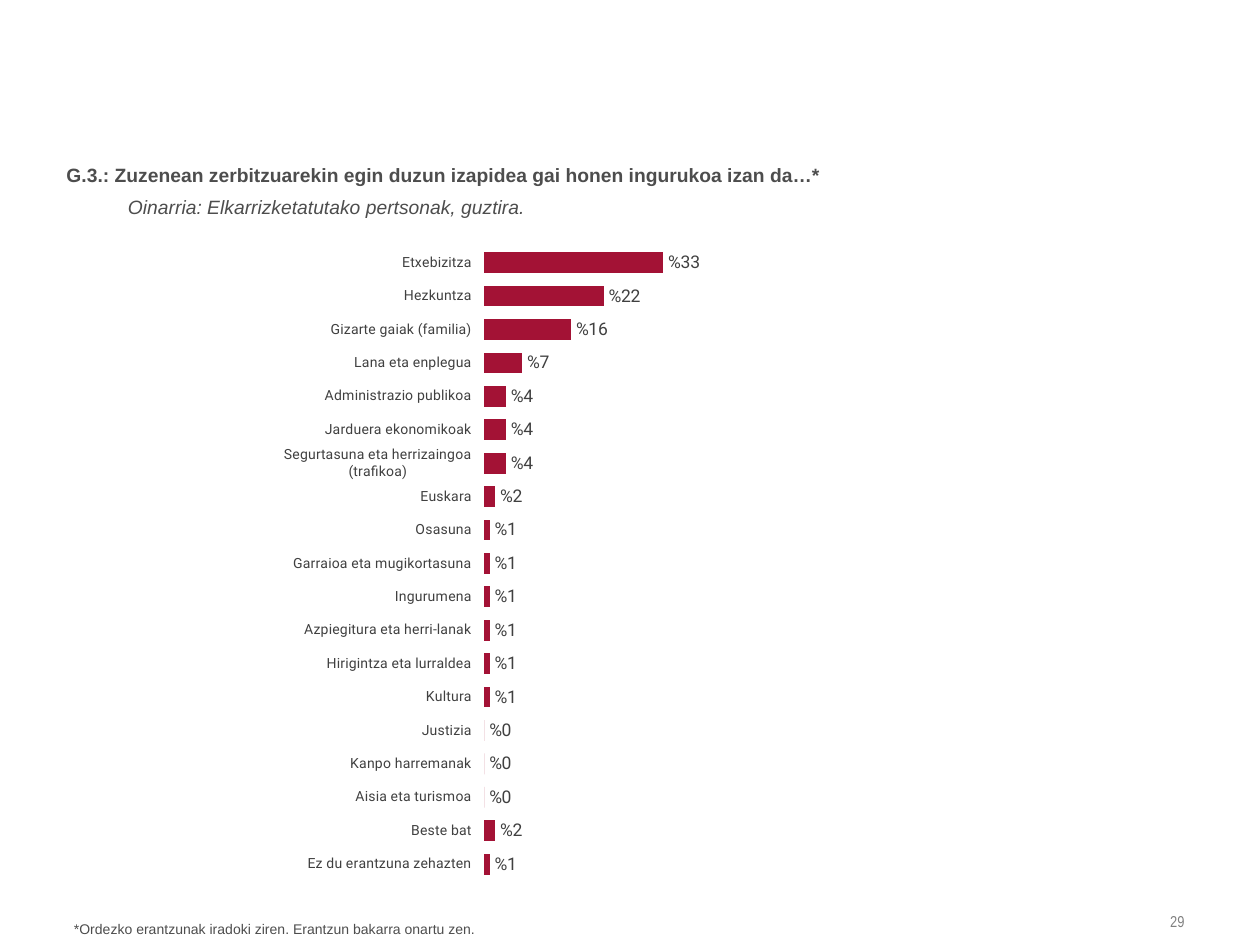
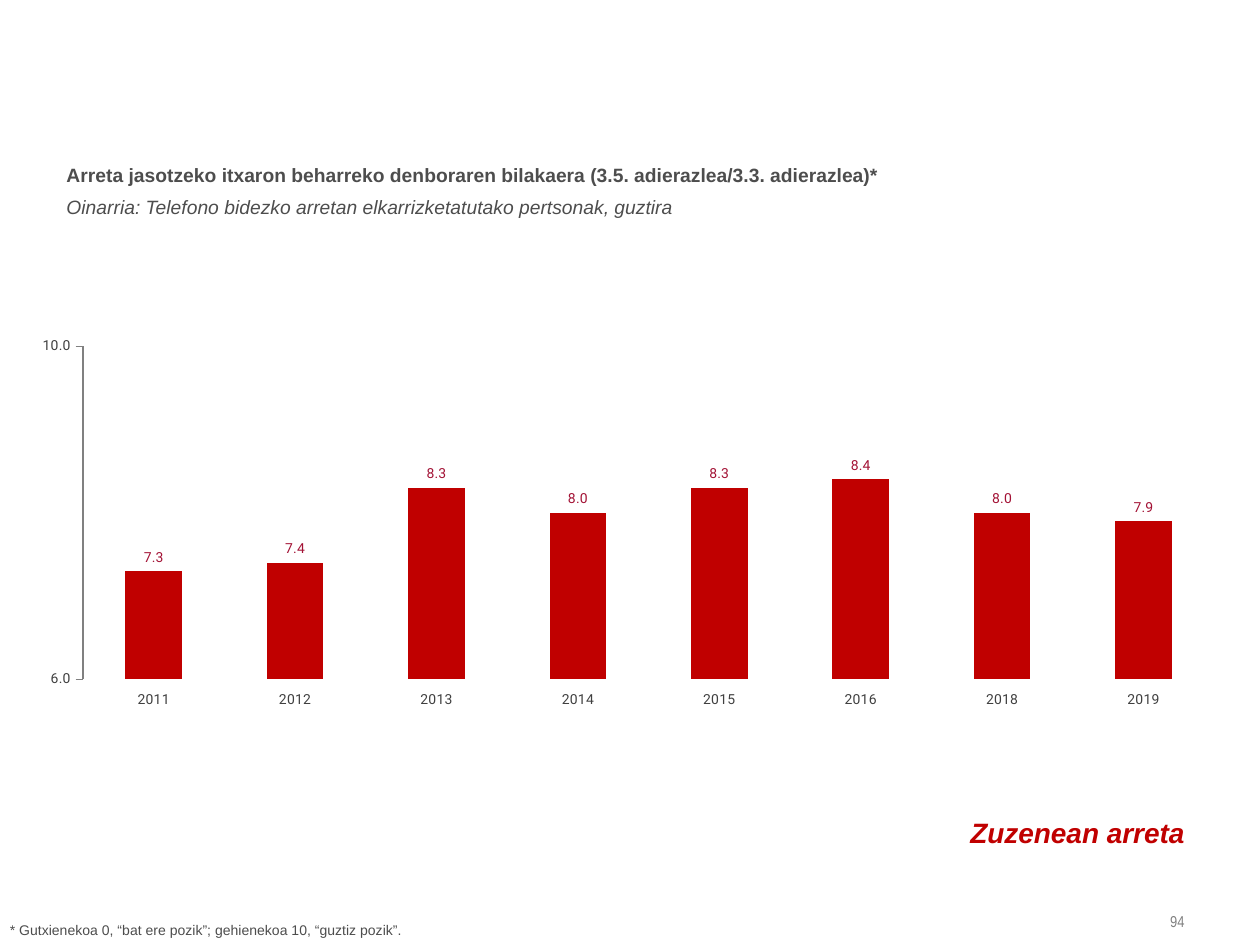
from dataclasses import dataclass

from lxml import etree
from pptx import Presentation
from pptx import util as u
from pptx.chart import data as chart_data
from pptx.dml.color import RGBColor
from pptx.enum import chart as ch
from pptx.enum import text as tx
from pptx.oxml import ns


# Shared look
@dataclass(frozen=True)
class Theme:
    body_font: str = "Arial"
    number_font: str = "Arial Narrow"
    chart_font: str = "Roboto"
    ink: str = "4D4D4D"
    chart_ink: str = "404040"
    muted: str = "808080"
    crimson: str = "A31235"
    red: str = "C00000"
    title_size: int = 11
    tag_size: int = 16
    chart_size: int = 10
    small_size: int = 8
    number_size: int = 9


THEME = Theme()


@dataclass(frozen=True)
class Box:
    """Left, top, width and height in centimetres."""
    left: float
    top: float
    width: float
    height: float

    def place(self, part) -> None:
        part.left, part.top, part.width, part.height = self.lengths()

    def lengths(self) -> tuple:
        return tuple(u.Cm(v) for v in (self.left, self.top, self.width, self.height))


@dataclass(frozen=True)
class Style:
    size: int
    color: str = THEME.ink
    font: str = THEME.body_font
    bold: bool = False
    italic: bool = False
    align: tx.PP_ALIGN = tx.PP_ALIGN.LEFT
    anchor: tx.MSO_ANCHOR = tx.MSO_ANCHOR.TOP
    line_points: int = 0
    margin: float = 0
    hanging: float = 0


@dataclass(frozen=True)
class ChartPlan:
    kind: ch.XL_CHART_TYPE
    box: Box
    plot: tuple[float, float, float, float]  # x, y, w, h as shares of the chart
    values: dict[str, float]
    color: str
    gap: int
    scale: tuple[float, float, float]  # minimum, maximum, major unit
    label_format: str
    label_size: int
    label_color: str
    top_down: bool = False
    value_axis: bool = False


@dataclass(frozen=True)
class SlidePlan:
    question: str
    base: str
    number: str
    footnote: str
    footnote_box: Box
    footnote_line: int
    chart: ChartPlan
    hanging: float = 0
    tag: str = ""


TITLE_BOX = Box(1.24, 3, 22.89, 1.55)
NUMBER_BOX = Box(22.1, 18.21, 2.03, 0.71)
TAG_BOX = Box(11.96, 16.36, 12.17, 0.89)
NUMBER_STYLE = Style(THEME.number_size, THEME.muted, THEME.number_font,
                     align=tx.PP_ALIGN.RIGHT, anchor=tx.MSO_ANCHOR.MIDDLE)
TAG_STYLE = Style(THEME.tag_size, THEME.red, bold=True, italic=True,
                  align=tx.PP_ALIGN.RIGHT, line_points=18)

# Content
TOPICS = ChartPlan(
    kind=ch.XL_CHART_TYPE.BAR_CLUSTERED,
    box=Box(5.51, 4.83, 15.19, 12.93),
    plot=(0.28, 0.01, 0.72, 0.99),
    values={
        "Etxebizitza": 0.33,
        "Hezkuntza": 0.22,
        "Gizarte gaiak (familia)": 0.16,
        "Lana eta enplegua": 0.07,
        "Administrazio publikoa": 0.04,
        "Jarduera ekonomikoak": 0.04,
        "Segurtasuna eta herrizaingoa (trafikoa)": 0.04,
        "Euskara": 0.02,
        "Osasuna": 0.01,
        "Garraioa eta mugikortasuna": 0.01,
        "Ingurumena": 0.01,
        "Azpiegitura eta herri-lanak": 0.01,
        "Hirigintza eta lurraldea": 0.01,
        "Kultura": 0.01,
        "Justizia": 0,
        "Kanpo harremanak": 0,
        "Aisia eta turismoa": 0,
        "Beste bat": 0.02,
        "Ez du erantzuna zehazten": 0.01,
    },
    color=THEME.crimson, gap=61, scale=(0, 1, 0.5), label_format="%0",
    label_size=THEME.chart_size, label_color=THEME.chart_ink, top_down=True,
)

WAITING = ChartPlan(
    kind=ch.XL_CHART_TYPE.COLUMN_CLUSTERED,
    box=Box(0.86, 6.81, 23.62, 7.47),
    plot=(0.03, 0.02, 0.97, 0.91),
    values={"2011": 7.3, "2012": 7.4, "2013": 8.3, "2014": 8,
            "2015": 8.3, "2016": 8.4, "2018": 8, "2019": 7.9},
    color=THEME.red, gap=150, scale=(6, 10, 4), label_format="0.0",
    label_size=THEME.small_size, label_color=THEME.crimson, value_axis=True,
)

SLIDES = [
    SlidePlan(
        question="G.3.: Zuzenean zerbitzuarekin egin duzun izapidea gai honen "
                 "ingurukoa izan da…*",
        base="Oinarria: Elkarrizketatutako pertsonak, guztira.",
        number="29",
        footnote="*Ordezko erantzunak iradoki ziren. Erantzun bakarra onartu zen.",
        footnote_box=Box(1.24, 18.06, 22.89, 0.97), footnote_line=20,
        chart=TOPICS, hanging=1.24,
    ),
    SlidePlan(
        question="Arreta jasotzeko itxaron beharreko denboraren bilakaera "
                 "(3.5. adierazlea/3.3. adierazlea)*",
        base="Oinarria: Telefono bidezko arretan elkarrizketatutako pertsonak, guztira",
        number="94",
        footnote="* Gutxienekoa 0, “bat ere pozik”; gehienekoa 10, “guztiz pozik”.",
        footnote_box=Box(-0.05, 18.44, 22.89, 0.61), footnote_line=0,
        chart=WAITING, tag="Zuzenean arreta",
    ),
]


def set_font(font, size: int, color: str, name: str) -> None:
    font.size, font.name = u.Pt(size), name
    font.color.rgb = RGBColor.from_string(color)


def write(frame, words: str, style: Style) -> None:
    """Fill a text frame with one paragraph in the given style."""
    frame.text = words.replace("\n", "\v")
    frame.word_wrap = True
    frame.auto_size = tx.MSO_AUTO_SIZE.NONE
    frame.vertical_anchor = style.anchor
    frame.margin_left, frame.margin_right = u.Cm(0.1), u.Cm(0.25)
    frame.margin_top = frame.margin_bottom = u.Cm(0.13)
    paragraph = frame.paragraphs[0]
    paragraph.alignment = style.align
    if style.line_points:
        paragraph.line_spacing = u.Pt(style.line_points)
    properties = paragraph._p.get_or_add_pPr()
    properties.set("marL", str(u.Cm(style.margin or style.hanging)))
    properties.set("indent", str(-u.Cm(style.hanging)))
    for run in paragraph.runs:
        set_font(run.font, style.size, style.color, style.font)
        run.font.bold, run.font.italic = style.bold, style.italic


def add_text(slide, box: Box, words: str, style: Style) -> None:
    write(slide.shapes.add_textbox(*box.lengths()).text_frame, words, style)


def add_title(slide, plan: SlidePlan) -> None:
    title = slide.shapes.title
    TITLE_BOX.place(title)
    write(title.text_frame, f"{plan.question}\n{plan.base}",
          Style(THEME.title_size, bold=True, line_points=18, hanging=plan.hanging))
    base = title.text_frame.paragraphs[0].runs[1]
    base.font.bold, base.font.italic = False, True


def fix_plot(chart, shares: tuple[float, float, float, float]) -> None:
    """Pin the inner plot area to shares of the chart."""
    area = chart._chartSpace.chart.plotArea
    for old in area.findall(ns.qn("c:layout")):
        area.remove(old)
    layout = etree.Element(ns.qn("c:layout"))
    area.insert(0, layout)
    manual = etree.SubElement(layout, ns.qn("c:manualLayout"))
    settings = [("layoutTarget", "inner"), ("xMode", "edge"), ("yMode", "edge"),
                *zip("xywh", shares)]
    for tag, value in settings:
        etree.SubElement(manual, ns.qn(f"c:{tag}")).set("val", str(value))


def add_bars(slide, plan: ChartPlan) -> None:
    data = chart_data.CategoryChartData()
    data.categories = list(plan.values)
    data.add_series("Series 1", list(plan.values.values()))
    chart = slide.shapes.add_chart(plan.kind, *plan.box.lengths(), data).chart
    chart.has_legend = chart.has_title = False
    set_font(chart.font, THEME.chart_size, THEME.chart_ink, THEME.chart_font)
    fix_plot(chart, plan.plot)

    # Bars and their values
    plot = chart.plots[0]
    plot.gap_width, plot.vary_by_categories = plan.gap, False
    fill = plot.series[0].format.fill
    fill.solid()
    fill.fore_color.rgb = RGBColor.from_string(plan.color)
    plot.has_data_labels = True
    labels = plot.data_labels
    labels.show_value = True
    labels.position = ch.XL_LABEL_POSITION.OUTSIDE_END
    labels.number_format, labels.number_format_is_linked = plan.label_format, False
    set_font(labels.font, plan.label_size, plan.label_color, THEME.chart_font)

    # Axes
    categories, values = chart.category_axis, chart.value_axis
    for axis in (categories, values):
        axis.has_major_gridlines = False
        axis.major_tick_mark = ch.XL_TICK_MARK.OUTSIDE
        set_font(axis.tick_labels.font, THEME.small_size, THEME.chart_ink,
                 THEME.chart_font)
    categories.format.line.fill.background()
    categories.reverse_order = plan.top_down
    values.minimum_scale, values.maximum_scale, values.major_unit = plan.scale
    values.visible = plan.value_axis
    values.tick_labels.number_format = "#,##0.0" if plan.value_axis else "%0"
    values.tick_labels.number_format_is_linked = False
    values.format.line.color.rgb = RGBColor.from_string(THEME.muted)
    values.format.line.width = u.Pt(0.75)


def build_slide(deck, plan: SlidePlan) -> None:
    slide = deck.slides.add_slide(deck.slide_layouts.get_by_name("Title Only"))
    add_title(slide, plan)
    add_bars(slide, plan.chart)
    add_text(slide, NUMBER_BOX, plan.number, NUMBER_STYLE)
    add_text(slide, plan.footnote_box, plan.footnote,
             Style(THEME.small_size, line_points=plan.footnote_line, margin=0.15))
    if plan.tag:
        add_text(slide, TAG_BOX, plan.tag, TAG_STYLE)


def main() -> None:
    deck = Presentation()
    deck.slide_width, deck.slide_height = u.Cm(25.4), u.Cm(19.05)
    for plan in SLIDES:
        build_slide(deck, plan)
    deck.save("out.pptx")


if __name__ == "__main__":
    main()
